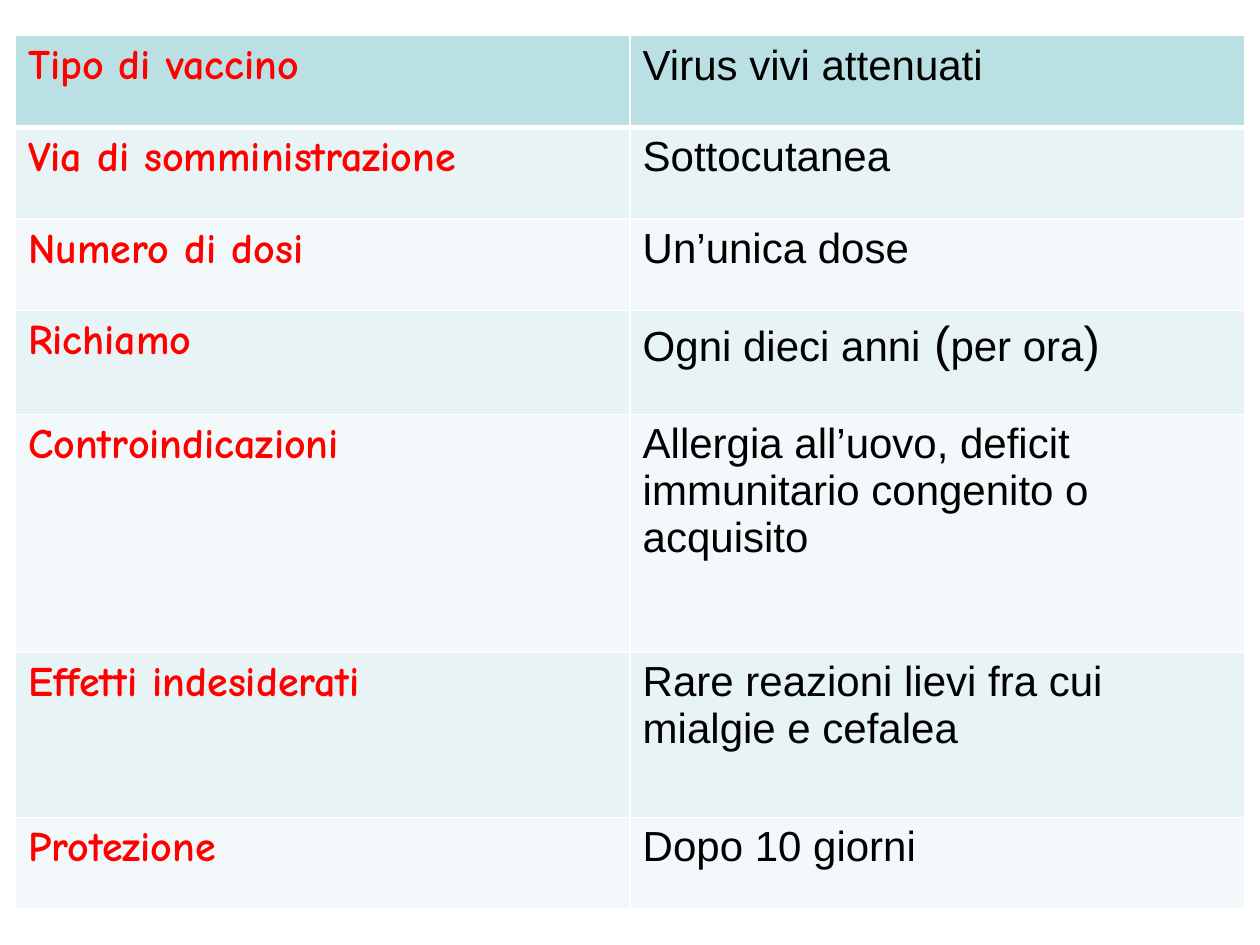
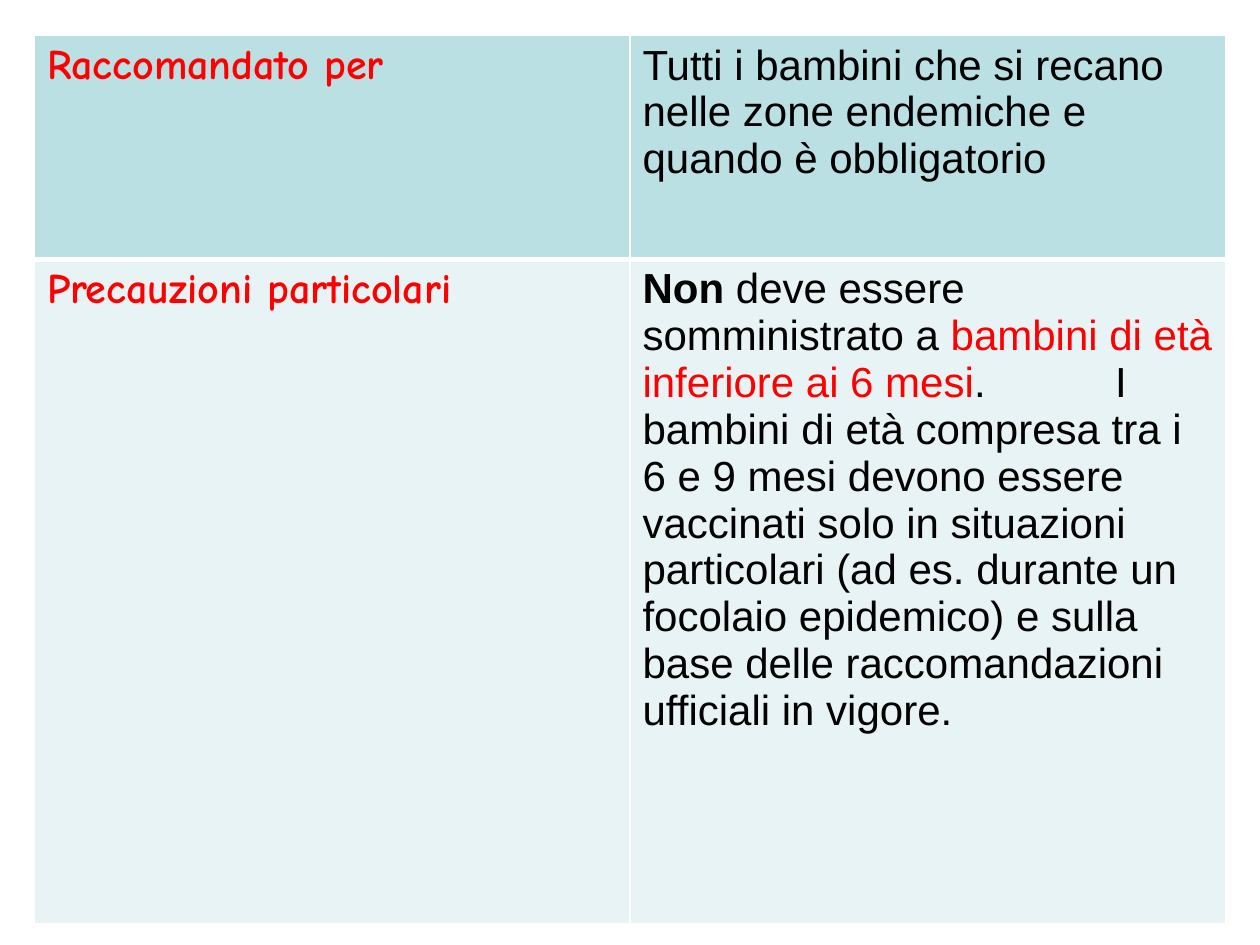
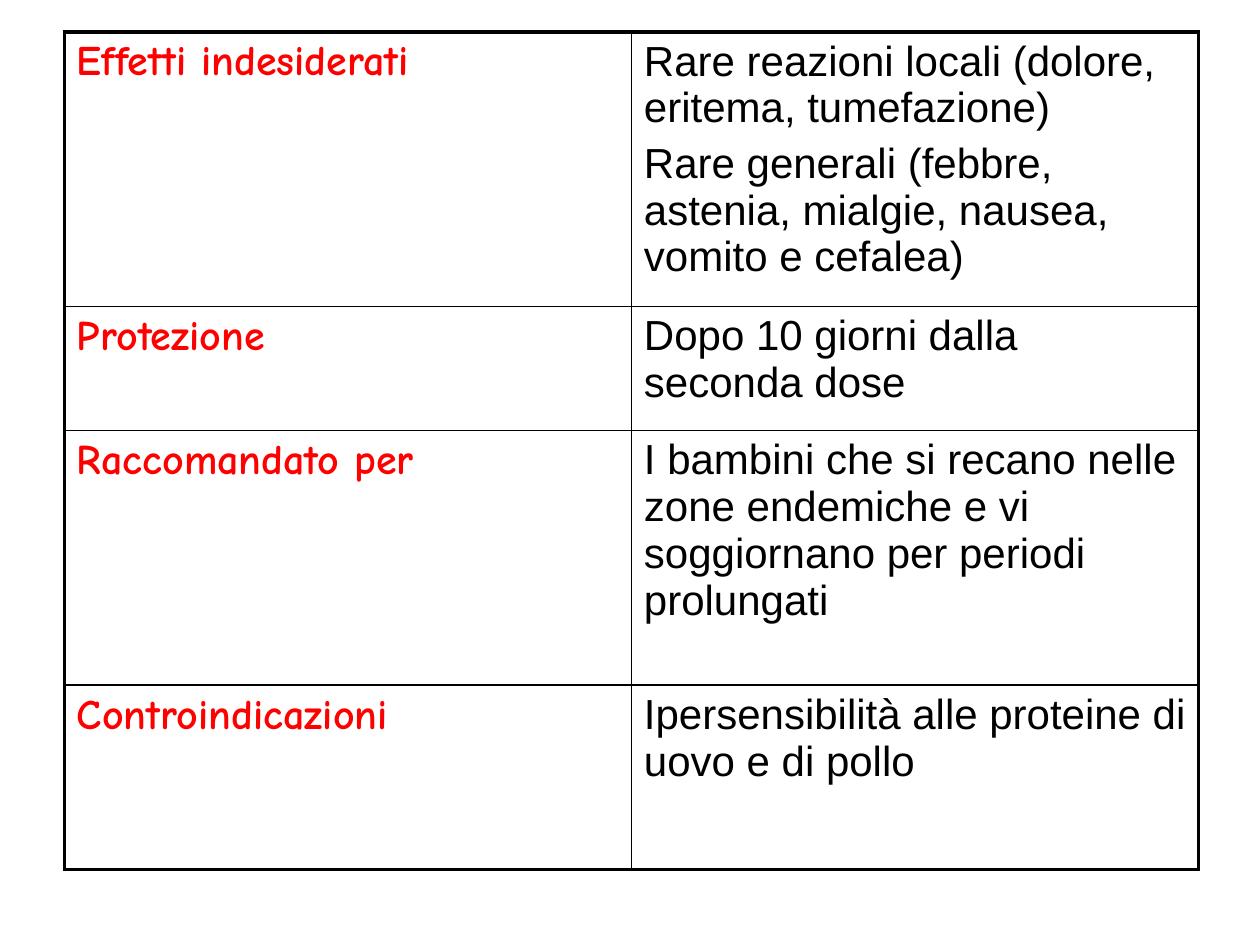
from lxml import etree
from pptx import Presentation
from pptx.dml.color import RGBColor
from pptx.oxml.ns import qn
from pptx.util import Pt

BLACK = RGBColor(0x00, 0x00, 0x00)
WHITE = RGBColor(0xFF, 0xFF, 0xFF)
RED = RGBColor(0xFF, 0x00, 0x00)
HEADER_TEAL = RGBColor(0xBB, 0xE0, 0xE3)
BAND_DARK = RGBColor(0xE7, 0xF3, 0xF4)
BAND_LIGHT = RGBColor(0xF3, 0xF9, 0xFA)

LABEL_FONT, BODY_FONT = "Comic Neue", "Arial"
TEXT_SIZE = 24
PARAGRAPH_GAP = Pt(4.8)
TAB_STOP = Pt(270)

# Border widths: outer frame, inner lines, line under the first row
TEAL_STYLE = {"fills": (HEADER_TEAL, BAND_DARK, BAND_LIGHT), "line": WHITE,
              "outer": 1, "inner": 1, "header": 3}
PLAIN_STYLE = {"fills": None, "line": BLACK,
               "outer": 2.25, "inner": 1, "header": 1}

# Each row: label, height, paragraphs; a paragraph is a text or a list of
# (text, font changes) spans
TABLES = [
    {"left": 8.9, "top": 20.4, "width": 702.4, "style": TEAL_STYLE, "rows": [
        ("Tipo di vaccino", 52.4, ["Virus vivi attenuati"]),
        ("Via di somministrazione", 52.4, ["Sottocutanea"]),
        ("Numero di dosi", 52.4, ["Un’unica dose"]),
        ("Richiamo", 59.2, [[("Ogni dieci anni", {}), (" (", {"size": 28}),
                             ("per ora", {}), (")", {"size": 28})]]),
        ("Controindicazioni", 136.1,
         ["Allergia all’uovo, deficit immunitario congenito o acquisito"]),
        ("Effetti indesiderati", 94.2,
         ["Rare reazioni lievi fra cui mialgie e cefalea"]),
        ("Protezione", 52.4, ["Dopo 10 giorni"]),
    ]},
    {"left": 19.7, "top": 20.4, "width": 680.6, "style": TEAL_STYLE, "rows": [
        ("Raccomandato per", 128,
         ["Tutti i bambini che si recano nelle zone endemiche e quando è "
          "obbligatorio"]),
        ("Precauzioni particolari", 379.4, [[
            ("Non", {"bold": True}),
            (" deve essere somministrato a ", {}),
            ("bambini di età inferiore ai 6 mesi", {"color": RED}),
            (".\tI bambini di età compresa tra i 6 e 9 mesi devono essere "
             "vaccinati solo in situazioni particolari (ad es. durante un "
             "focolaio epidemico) e sulla base delle raccomandazioni "
             "ufficiali in vigore.", {})]]),
    ]},
    {"left": 36.8, "top": 18.2, "width": 648, "style": PLAIN_STYLE, "rows": [
        ("Effetti indesiderati", 157,
         ["Rare reazioni locali (dolore, eritema, tumefazione)",
          "Rare generali (febbre, astenia, mialgie, nausea, vomito e "
          "cefalea)"]),
        ("Protezione", 70.8, ["Dopo 10 giorni dalla seconda dose"]),
        ("Raccomandato per", 145.6,
         ["I bambini che si recano nelle zone endemiche e vi soggiornano per "
          "periodi prolungati"]),
        ("Controindicazioni", 105.2,
         ["Ipersensibilità alle proteine di uovo e di pollo"]),
    ]},
]


def add_tab_stop(para):
    properties = para._p.get_or_add_pPr()
    tabs = etree.SubElement(properties, qn("a:tabLst"))
    etree.SubElement(tabs, qn("a:tab"), pos=str(TAB_STOP), algn="l")


def write_cell(cell, paragraphs, name, color, bold):
    frame = cell.text_frame
    for index, content in enumerate(paragraphs):
        para = frame.add_paragraph() if index else frame.paragraphs[0]
        if index:
            para.space_before = PARAGRAPH_GAP
        spans = [(content, {})] if isinstance(content, str) else content
        if any("\t" in text for text, _ in spans):
            add_tab_stop(para)
        for text, changes in spans:
            span = para.add_run()
            span.text = text
            span.font.name = name
            span.font.size = Pt(changes.get("size", TEXT_SIZE))
            span.font.bold = changes.get("bold", bold)
            span.font.color.rgb = changes.get("color", color)


def set_borders(cell, widths, color):
    """Widths run left, right, top, bottom; lines must precede the fill."""
    properties = cell._tc.get_or_add_tcPr()
    for index, (side, width) in enumerate(zip("LRTB", widths)):
        line = etree.Element(qn(f"a:ln{side}"), w=str(Pt(width)))
        solid = etree.SubElement(line, qn("a:solidFill"))
        etree.SubElement(solid, qn("a:srgbClr"), val=str(color))
        properties.insert(index, line)


def paint_cell(cell, row, fills):
    if fills is None:
        cell.fill.background()
        return
    header, *bands = fills
    cell.fill.solid()
    cell.fill.fore_color.rgb = bands[(row - 1) % len(bands)] if row else header


def add_vaccine_table(slide, content):
    rows, style = content["rows"], content["style"]
    total_height = sum(height for _, height, _ in rows)
    table = slide.shapes.add_table(
        len(rows), 2, Pt(content["left"]), Pt(content["top"]),
        Pt(content["width"]), Pt(total_height)).table
    table.first_row = table.horz_banding = False

    # Grid lines, listed from left to right and from top to bottom
    outer, inner = style["outer"], style["inner"]
    across = [outer, inner, outer]
    down = [outer, style["header"], *[inner] * (len(rows) - 2), outer]

    for row, (label, height, paragraphs) in enumerate(rows):
        table.rows[row].height = Pt(height)
        write_cell(table.cell(row, 0), [label], LABEL_FONT, RED, True)
        write_cell(table.cell(row, 1), paragraphs, BODY_FONT, BLACK, False)
        for column in range(2):
            cell = table.cell(row, column)
            paint_cell(cell, row, style["fills"])
            widths = across[column:column + 2] + down[row:row + 2]
            set_borders(cell, widths, style["line"])


def main():
    deck = Presentation()
    deck.slide_width, deck.slide_height = Pt(720), Pt(540)
    blank = deck.slide_layouts[6]
    for content in TABLES:
        add_vaccine_table(deck.slides.add_slide(blank), content)
    deck.save("out.pptx")


if __name__ == "__main__":
    main()
